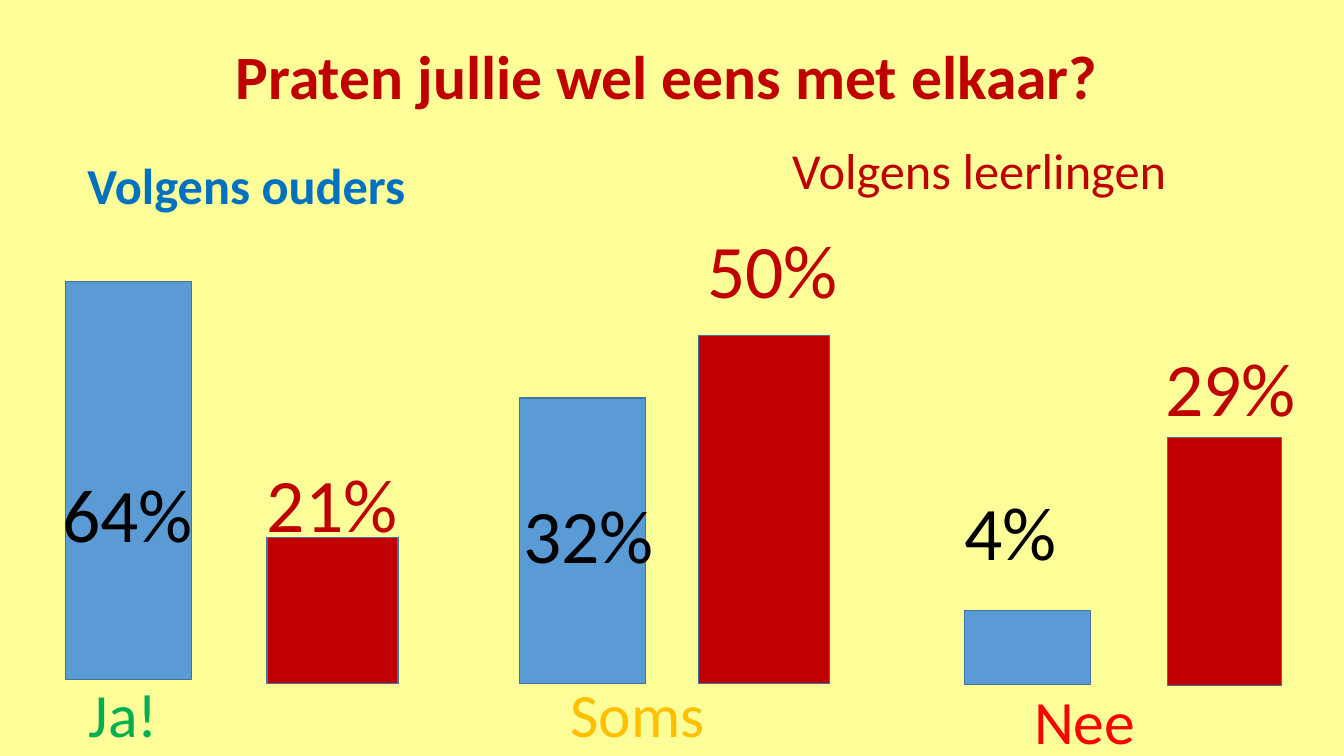
from pptx import Presentation
from pptx.dml.color import RGBColor
from pptx.enum import shapes, text
from pptx.util import Pt

BACKGROUND, OUTLINE = "FFFF99", "43739E"
BLUE, RED, BLACK = "5B9BD5", "C00000", "000000"
TITLE = ("Praten jullie wel eens met elkaar?", (62.6, 4.3, 828, 104.4))

# bar colour, bar box, percentage, label colour, label box (left, top, width, height)
BARS = [
    (BLUE, (46.8, 200.9, 90, 284.4), "64%", BLACK, (37.4, 329.8, 126, 72.7)),
    (RED, (190.8, 383.8, 93.6, 104.4), "21%", RED, (183.6, 322.6, 118, 72.7)),
    (BLUE, (371.2, 284.4, 90, 203.8), "32%", BLACK, (366.5, 344.9, 126, 72.7)),
    (RED, (499, 239.8, 93.6, 248.4), "50%", RED, (498.2, 155.5, 118, 72.7)),
    (BLUE, (689, 436.3, 90, 52.6), "4%", BLACK, (681.8, 342.7, 126, 72.7)),
    (RED, (833.8, 312.5, 81.4, 177.1), "29%", RED, (825.1, 239.8, 118, 72.7)),
]

# text, size, colour, bold, box
CAPTIONS = [
    ("Volgens ouders", 36, "0070C0", True, (55.4, 106.6, 316, 51)),
    ("Volgens leerlingen", 36, RED, False, (558.7, 95.8, 316, 51)),
    ("Ja!", 44, "00B050", False, (56.2, 479.5, 94.3, 60.5)),
    ("Soms", 44, "FFC000", False, (400.3, 479.5, 140.4, 60.5)),
    ("Nee", 44, "FF0000", False, (731.5, 484.6, 140.4, 60.5)),
]


def rgb(value):
    return RGBColor.from_string(value)


def points(box):
    return [Pt(v) for v in box]


def write(tf, content, size, color, bold=False):
    tf.word_wrap = True
    p = tf.paragraphs[0]
    r = p.add_run()
    r.text = content
    for name, value in dict(name="Calibri", size=Pt(size), bold=bold).items():
        setattr(r.font, name, value)
    r.font.color.rgb = rgb(color)
    return p


def add_text(slide, box, *style):
    tf = slide.shapes.add_textbox(*points(box)).text_frame
    write(tf, *style)
    tf.auto_size = text.MSO_AUTO_SIZE.SHAPE_TO_FIT_TEXT


def add_bar(slide, box, color):
    sp = slide.shapes.add_shape(shapes.MSO_SHAPE.RECTANGLE, *points(box))
    sp.shadow.inherit = False
    sp.fill.solid()
    sp.fill.fore_color.rgb = rgb(color)
    sp.line.color.rgb = rgb(OUTLINE)
    sp.line.width = Pt(1)


def add_title(slide, content, box):
    sp = slide.shapes.title
    for name, value in zip(("left", "top", "width", "height"), points(box)):
        setattr(sp, name, value)
    sp.text_frame.vertical_anchor = text.MSO_ANCHOR.MIDDLE
    p = write(sp.text_frame, content, 44, RED, True)
    p.alignment = text.PP_ALIGN.CENTER
    p.line_spacing = 0.9


def main():
    prs = Presentation()
    prs.slide_width, prs.slide_height = Pt(960), Pt(540)
    slide = prs.slides.add_slide(prs.slide_layouts[5])
    slide.background.fill.solid()
    slide.background.fill.fore_color.rgb = rgb(BACKGROUND)

    add_title(slide, *TITLE)
    for color, bar_box, percentage, label_color, label_box in BARS:
        add_bar(slide, bar_box, color)
        add_text(slide, label_box, percentage, 54, label_color)
    for content, size, color, bold, box in CAPTIONS:
        add_text(slide, box, content, size, color, bold)
    prs.save("out.pptx")


if __name__ == "__main__":
    main()
